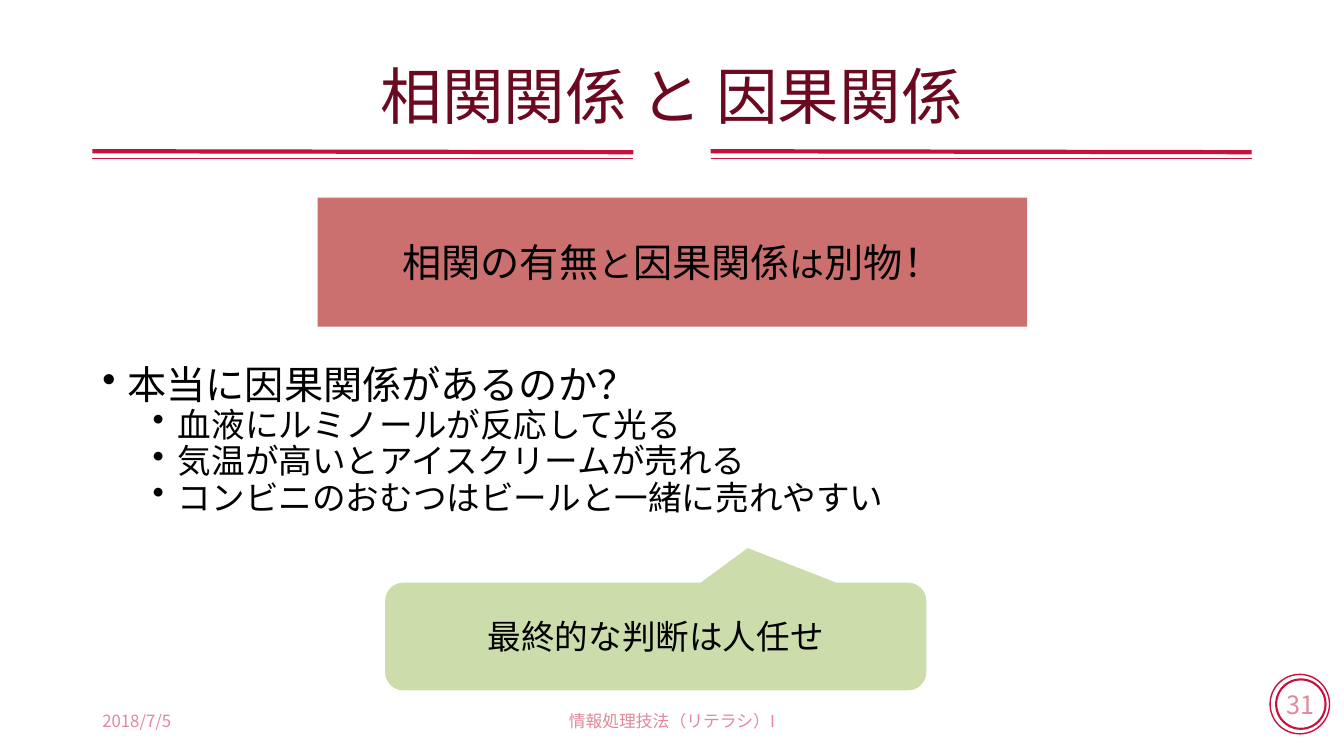
from dataclasses import dataclass

from lxml import etree
from pptx import Presentation
from pptx.dml.color import RGBColor
from pptx.enum.shapes import MSO_CONNECTOR, MSO_SHAPE
from pptx.enum.text import MSO_ANCHOR, PP_ALIGN
from pptx.oxml.ns import qn
from pptx.util import Emu, Inches, Pt

OVAL, RECTANGLE = MSO_SHAPE.OVAL, MSO_SHAPE.RECTANGLE
CALLOUT = MSO_SHAPE.ROUNDED_RECTANGULAR_CALLOUT
STRAIGHT = MSO_CONNECTOR.STRAIGHT
LEFT, CENTER = PP_ALIGN.LEFT, PP_ALIGN.CENTER
TOP, MIDDLE = MSO_ANCHOR.TOP, MSO_ANCHOR.MIDDLE

COLORS = {"accent": "C8103D", "title": "6B0920", "text": "000000",
          "red": "C0504D", "green": "9BBB59"}
JAPANESE_FONT = "Noto Sans CJK JP"
LATIN_FONT = "Calibri"

# The slide is a grid of 160 columns by 90 rows
COLUMNS, ROWS = 160, 90
SLIDE_WIDTH, SLIDE_HEIGHT = Inches(13.333), Inches(7.5)
MARGIN, CONTENT_WIDTH = 11, 138
RULE_WIDTH = 64.4
FOOTER_ROW, FOOTER_HEIGHT = 83.4, 4.8


@dataclass(frozen=True)
class Box:
    column: float
    row: float
    width: float
    height: float

    def place(self) -> tuple[Emu, Emu, Emu, Emu]:
        return (across(self.column), down(self.row),
                across(self.width), down(self.height))


@dataclass(frozen=True)
class Panel:
    kind: int
    box: Box
    fill: str | None = None
    opacity: int = 100
    line_width: float = 0
    adjustments: tuple[float, ...] = ()


@dataclass(frozen=True)
class Rule:
    start_row: float
    end_row: float
    width: float


@dataclass(frozen=True)
class Bullet:
    text: str
    level: int
    size: float
    indent: float
    space_before: float


RULES = (Rule(18, 18.12, 3), Rule(18.84, 18.84, 1))
RULE_COLUMNS = (MARGIN + CONTENT_WIDTH - RULE_WIDTH, MARGIN)

NUMBER_RING = Panel(OVAL, Box(151.2, 80.28, 7.08, 7.08), line_width=1)
NUMBER_DISC = Panel(OVAL, Box(151.92, 80.88, 5.88, 5.88), line_width=1.5)
MESSAGE = Panel(RECTANGLE, Box(37.8, 23.52, 84.48, 15.36), "red", 81)
REMARK = Panel(CALLOUT, Box(45.84, 69.36, 64.44, 12.84), "green", 50,
               adjustments=(0.17, -0.82, 0.17))

MESSAGE_RUNS = (("相関の有無", 28), ("と", 25), ("因果関係", 28),
                ("は", 25), ("別物！", 28))
BULLETS = (
    Bullet("本当に因果関係があるのか？", 0, 28, 0.25, 0),
    Bullet("血液にルミノールが反応して光る", 1, 24, 0.75, 3),
    Bullet("気温が高いとアイスクリームが売れる", 1, 24, 0.75, 3),
    Bullet("コンビニのおむつはビールと一緒に売れやすい", 1, 24, 0.75, 3),
)


def across(columns: float) -> Emu:
    return Emu(round(SLIDE_WIDTH * columns / COLUMNS))


def down(rows: float) -> Emu:
    return Emu(round(SLIDE_HEIGHT * rows / ROWS))


def paint(fill, color: str, opacity: int = 100) -> None:
    fill.solid()
    fill.fore_color.rgb = RGBColor.from_string(COLORS[color])
    if opacity < 100:
        for element in fill._xPr.iter(qn("a:srgbClr")):
            alpha = etree.SubElement(element, qn("a:alpha"))
            alpha.set("val", str(opacity * 1000))


def add_run(paragraph, text: str, *, size: float, color: str = "text",
            opacity: int = 100, font: str = JAPANESE_FONT) -> None:
    run = paragraph.add_run()
    run.text = text
    run.font.size = Pt(size)
    paint(run.font.fill, color, opacity)
    run.font.name = font
    east_asian = etree.SubElement(run.font._element, qn("a:ea"))
    east_asian.set("typeface", JAPANESE_FONT)


def prepare(shape, *, anchor=MIDDLE, align=CENTER, wrap: bool = True):
    """Set up the text frame and return its first paragraph."""
    frame = shape.text_frame
    frame.word_wrap = wrap
    frame.vertical_anchor = anchor
    paragraph = frame.paragraphs[0]
    paragraph.alignment = align
    return paragraph


def add_label(slide, box: Box, text: str, *, align=CENTER,
              line_spacing: float = 1.0, **run_format) -> None:
    paragraph = prepare(slide.shapes.add_textbox(*box.place()), align=align)
    paragraph.line_spacing = line_spacing
    add_run(paragraph, text, **run_format)


def add_panel(slide, panel: Panel):
    shape = slide.shapes.add_shape(panel.kind, *panel.box.place())
    shape.shadow.inherit = False
    for index, value in enumerate(panel.adjustments):
        shape.adjustments[index] = value
    if panel.fill:
        paint(shape.fill, panel.fill, panel.opacity)
    else:
        shape.fill.background()
    if panel.line_width:
        paint(shape.line.fill, "accent")
        shape.line.width = Pt(panel.line_width)
    else:
        shape.line.fill.background()
    return shape


def add_rule(slide, column: float, rule: Rule) -> None:
    connector = slide.shapes.add_connector(
        STRAIGHT, across(column), down(rule.start_row),
        across(column + RULE_WIDTH), down(rule.end_row))
    paint(connector.line.fill, "accent")
    connector.line.width = Pt(rule.width)
    etree.SubElement(connector._element.spPr, qn("a:effectLst"))


def add_bullets(slide, box: Box, bullets: tuple[Bullet, ...]) -> None:
    shape = slide.shapes.add_textbox(*box.place())
    paragraph = prepare(shape, anchor=TOP, align=LEFT)
    for index, bullet in enumerate(bullets):
        if index:
            paragraph = shape.text_frame.add_paragraph()
        paragraph.level = bullet.level
        paragraph.line_spacing = 0.8
        paragraph.space_before = Pt(bullet.space_before)
        properties = paragraph._p.get_or_add_pPr()
        properties.set("marL", str(Inches(bullet.indent)))
        properties.set("indent", str(Inches(-0.25)))
        etree.SubElement(properties, qn("a:buChar")).set("char", "•")
        add_run(paragraph, bullet.text, size=bullet.size)


def main() -> None:
    presentation = Presentation()
    presentation.slide_width = SLIDE_WIDTH
    presentation.slide_height = SLIDE_HEIGHT
    slide = presentation.slides.add_slide(presentation.slide_layouts[6])

    # Slide number in a double ring
    add_panel(slide, NUMBER_RING)
    number = prepare(add_panel(slide, NUMBER_DISC), wrap=False)
    add_run(number, "31", size=18, color="accent", opacity=50)

    # Title above two pairs of rules
    for column in RULE_COLUMNS:
        for rule in RULES:
            add_rule(slide, column, rule)
    add_label(slide, Box(MARGIN, 4.8, CONTENT_WIDTH, 14.04),
              "相関関係 と 因果関係", line_spacing=0.9, size=44, color="title")

    # Questions
    add_bullets(slide, Box(MARGIN, 43.44, CONTENT_WIDTH, 37.68), BULLETS)

    # Footer
    footer_format = {"size": 12, "color": "accent", "opacity": 50}
    add_label(slide, Box(MARGIN, FOOTER_ROW, 36, FOOTER_HEIGHT),
              "2018/7/5", align=LEFT, **footer_format)
    add_label(slide, Box(53, FOOTER_ROW, 54, FOOTER_HEIGHT),
              "情報処理技法（リテラシ）I", **footer_format)

    # Key message and remark
    message = prepare(add_panel(slide, MESSAGE))
    for text, size in MESSAGE_RUNS:
        add_run(message, text, size=size)
    remark = prepare(add_panel(slide, REMARK))
    add_run(remark, "最終的な判断は人任せ", size=24, font=LATIN_FONT)

    presentation.save("out.pptx")


if __name__ == "__main__":
    main()
